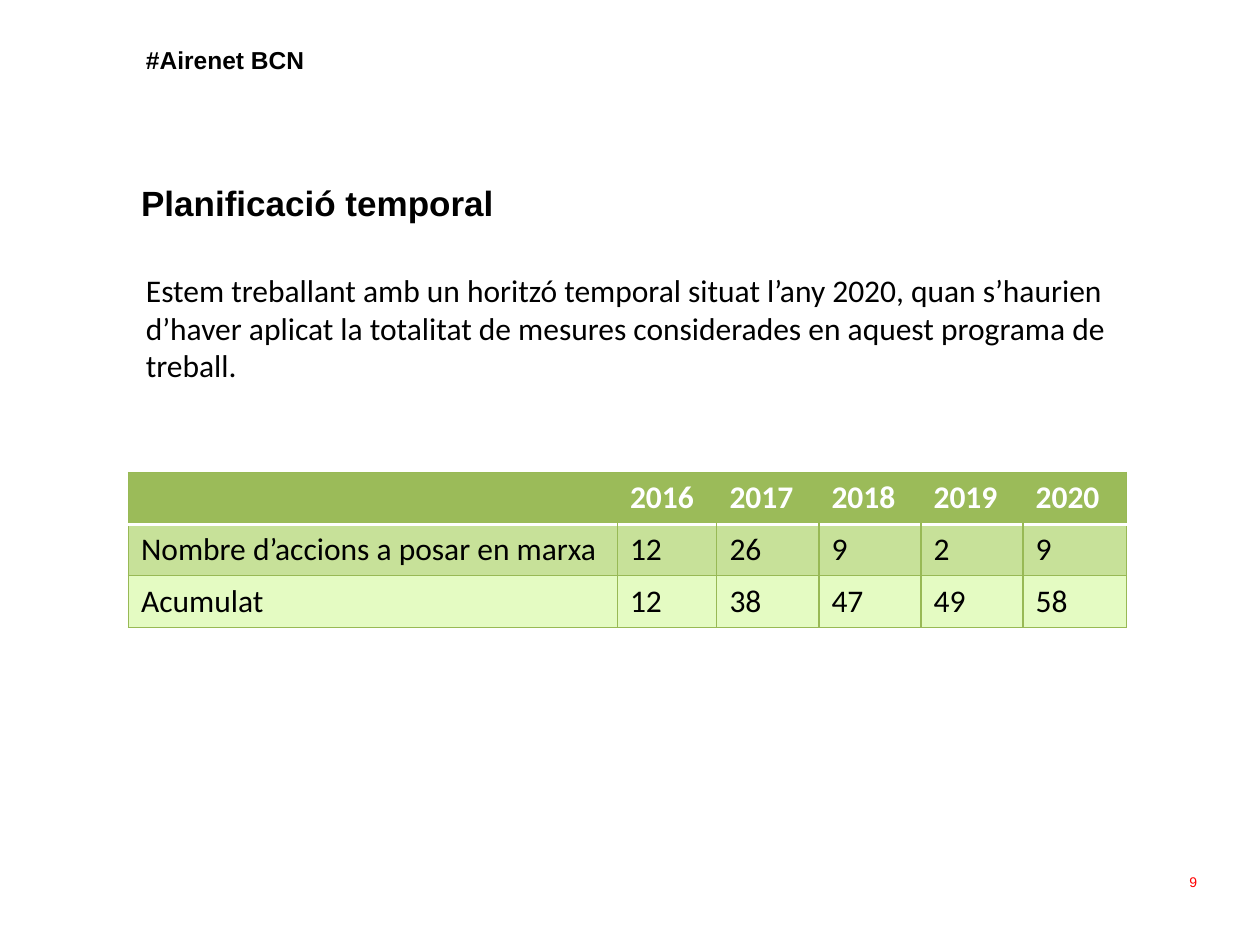
from lxml import etree
from pptx import Presentation
from pptx.dml.color import RGBColor
from pptx.enum.text import MSO_ANCHOR, PP_ALIGN
from pptx.oxml.ns import qn
from pptx.util import Inches, Pt

TOP, MID = MSO_ANCHOR.TOP, MSO_ANCHOR.MIDDLE
LEFT, RIGHT = PP_ALIGN.LEFT, PP_ALIGN.RIGHT
BLACK = RGBColor(0x00, 0x00, 0x00)
WHITE = RGBColor(0xFF, 0xFF, 0xFF)
RED = RGBColor(0xFF, 0x00, 0x00)
GREEN = RGBColor(0x9B, 0xBB, 0x59)
LIGHT = RGBColor(0xC7, 0xE1, 0x99)
PALE = RGBColor(0xE4, 0xFB, 0xC2)
EDGE = RGBColor(0x98, 0xB9, 0x55)


def write(frame, text, look, align=LEFT, space=None):
    frame.text = text
    para = frame.paragraphs[0]
    para.alignment = align
    para.line_spacing = space
    font = para.runs[0].font if para.runs else para.font
    for key, val in look.items():
        if key == "color":
            font.color.rgb = val
        else:
            setattr(font, key, val)


def border(cell, side, color, width):
    line = etree.SubElement(cell._tc.get_or_add_tcPr(), qn("a:ln" + side))
    line.set("w", str(Pt(width)))
    if color is None:
        etree.SubElement(line, qn("a:noFill"))
    else:
        fill = etree.SubElement(line, qn("a:solidFill"))
        etree.SubElement(fill, qn("a:srgbClr")).set("val", str(color))


prs = Presentation()
prs.slide_width, prs.slide_height = Inches(10), Inches(7.5)
slide = prs.slides.add_slide(prs.slide_layouts[5])
shapes = slide.shapes

head = {"name": "Arial", "size": Pt(14), "bold": True, "color": BLACK}
main = {**head, "size": Pt(20)}
page = {"name": "Arial", "size": Pt(8), "color": RED}
body = {"name": "Calibri", "size": Pt(18), "bold": False, "color": BLACK}
label = {**body, "bold": True, "color": WHITE}

intro = (
    "Estem treballant amb un horitzó temporal situat l’any 2020, "
    "quan s’haurien d’haver aplicat la totalitat de mesures "
    "considerades en aquest programa de treball."
)
items = [
    ("#Airenet BCN", (1.06, 0.21, 4.69, 0.94), head, LEFT, Pt(24), TOP),
    ("Planificació temporal", (1.02, 1.39, 4.06, 0.44), main, LEFT, Pt(24), TOP),
    ("9", (7.27, 6.8, 2.33, 0.4), page, RIGHT, None, MID),
    (intro, (1.06, 2.1, 8.5, 1.01), body, LEFT, None, TOP),
]
for text, place, look, align, space, anchor in items:
    spot = [Inches(n) for n in place]
    if look is main:
        box = shapes.title
        box.left, box.top, box.width, box.height = spot
    else:
        box = shapes.add_textbox(*spot)
    frame = box.text_frame
    frame.word_wrap = True
    frame.vertical_anchor = anchor
    write(frame, text, look, align, space)

rows = [
    ["", "2016", "2017", "2018", "2019", "2020"],
    ["Nombre d’accions a posar en marxa", "12", "26", "9", "2", "9"],
    ["Acumulat", "12", "38", "47", "49", "58"],
]
widths = [3.88, 0.79, 0.81, 0.81, 0.81, 0.82]
fills = [GREEN, LIGHT, PALE]
last = len(widths) - 1
table = shapes.add_table(
    len(rows), len(widths), Inches(1.02), Inches(3.75), Inches(7.92), Inches(1.22)
).table
table.first_row = table.horz_banding = False
for col, width in zip(table.columns, widths):
    col.width = Inches(width)

for r, row in enumerate(rows):
    table.rows[r].height = Inches(0.41)
    for c, text in enumerate(row):
        cell = table.cell(r, c)
        border(cell, "L", EDGE if r or c == 0 else None, 0.75)
        border(cell, "R", EDGE if r or c == last else None, 0.75)
        border(cell, "T", *((WHITE, 2) if r == 1 else (EDGE, 0.75)))
        border(cell, "B", *((WHITE, 2) if r == 0 else (EDGE, 0.75)))
        cell.fill.solid()
        cell.fill.fore_color.rgb = fills[r]
        write(cell.text_frame, text, body if r else label)

prs.save("out.pptx")
